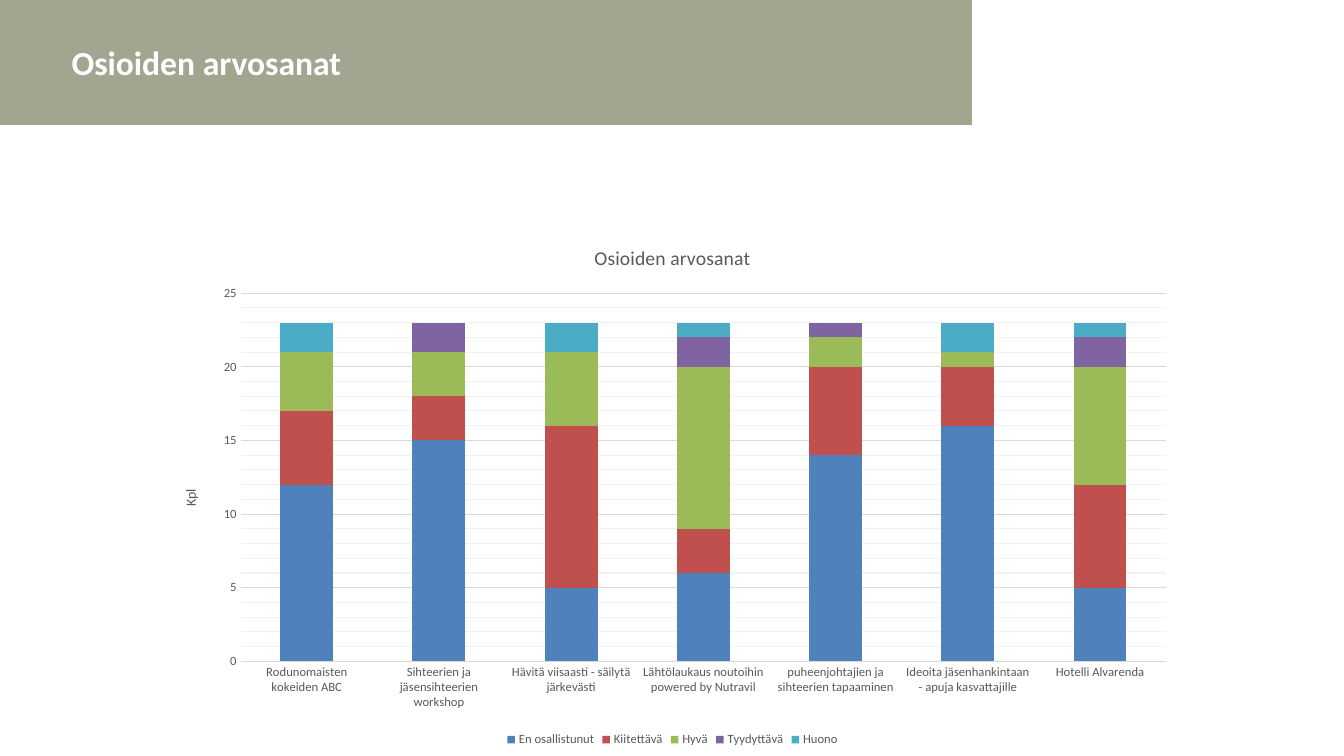
from copy import deepcopy

from lxml.etree import SubElement
from pptx import Presentation
from pptx.chart.data import CategoryChartData
from pptx.dml.color import RGBColor
from pptx.enum.chart import XL_CHART_TYPE, XL_LEGEND_POSITION, XL_TICK_MARK
from pptx.enum.shapes import MSO_SHAPE
from pptx.enum.text import MSO_ANCHOR
from pptx.oxml.ns import qn
from pptx.util import Inches, Pt

# Content
TITLE = "Osioiden arvosanat"
UNIT = "Kpl"
PARTS = [
    "Rodunomaisten kokeiden ABC",
    "Sihteerien ja jäsensihteerien workshop",
    "Hävitä viisaasti - säilytä järkevästi",
    "Lähtölaukaus noutoihin powered by Nutravil",
    "puheenjohtajien ja sihteerien tapaaminen",
    "Ideoita jäsenhankintaan - apuja kasvattajille",
    "Hotelli Alvarenda",
]
GRADES = [
    ("En osallistunut", "4F81BD", (12, 15, 5, 6, 14, 16, 5)),
    ("Kiitettävä", "C0504D", (5, 3, 11, 3, 6, 4, 7)),
    ("Hyvä", "9BBB59", (4, 3, 5, 11, 2, 1, 8)),
    ("Tyydyttävä", "8064A2", (0, 2, None, 2, 1, None, 2)),
    ("Huono", "4BACC6", (2, None, 2, 1, None, 2, 1)),
]
COLORS = {"band": "A1A690", "white": "FFFFFF", "text": "595959",
          "grid": "D9D9D9", "minor": "F2F2F2"}
PLOT = {"x": 0.08, "y": 0.13, "w": 0.9, "h": 0.7}
FONT = "Calibri"


def rgb(name):
    return RGBColor.from_string(COLORS[name])


def style(font, size, color="text", bold=False):
    font.name, font.size, font.bold = FONT, Pt(size), bold
    font.color.rgb = rgb(color)


def rule(line):
    line.color.rgb = rgb("grid")
    line.width = Pt(0.75)


def label(owner, text, size):
    frame = owner.text_frame
    frame.text = text
    style(frame.paragraphs[0].font, size)


deck = Presentation()
deck.slide_width, deck.slide_height = Inches(13.33), Inches(7.5)
slide = deck.slides.add_slide(deck.slide_layouts[6])

# Title band
band = slide.shapes.add_shape(MSO_SHAPE.RECTANGLE, 0, 0, Inches(9.64), Inches(1.24))
band.shadow.inherit = False
band.fill.solid()
band.fill.fore_color.rgb = rgb("band")
band.line.fill.background()

# Title
box = slide.shapes.add_textbox(Inches(0.67), Inches(0.05), Inches(7.73), Inches(1.13))
frame = box.text_frame
frame.word_wrap = True
frame.vertical_anchor = MSO_ANCHOR.MIDDLE
frame.margin_left = frame.margin_right = Inches(0.04)
frame.margin_top = frame.margin_bottom = Inches(0.04)
frame.text = TITLE
style(frame.paragraphs[0].font, 24, "white", True)

# Stacked column chart
data = CategoryChartData()
data.categories = PARTS
for name, _, votes in GRADES:
    data.add_series(name, votes)
chart = slide.shapes.add_chart(
    XL_CHART_TYPE.COLUMN_STACKED, Inches(1.57), Inches(2.23),
    Inches(10.2), Inches(5.22), data).chart
style(chart.font, 10)
chart.has_title = True
label(chart.chart_title, TITLE, 14)
chart.chart_title.include_in_layout = False
chart.has_legend = True
chart.legend.position = XL_LEGEND_POSITION.BOTTOM
chart.legend.include_in_layout = False
style(chart.legend.font, 9)

plot = chart.plots[0]
plot.gap_width, plot.overlap = 150, 100
plot.vary_by_categories = False
for series, (_, color, _) in zip(plot.series, GRADES):
    series.format.fill.solid()
    series.format.fill.fore_color.rgb = RGBColor.from_string(color)

# Axes
cat, val = chart.category_axis, chart.value_axis
for axis in (cat, val):
    axis.major_tick_mark = axis.minor_tick_mark = XL_TICK_MARK.NONE
    style(axis.tick_labels.font, 9)
rule(cat.format.line)
val.format.line.fill.background()
val.minimum_scale, val.maximum_scale = 0, 25
val.major_unit, val.minor_unit = 5, 1
label(val.axis_title, UNIT, 10)

# Gridlines: the minor ones take the major style in a paler colour
val.has_major_gridlines = val.has_minor_gridlines = True
rule(val.major_gridlines.format.line)
area = chart.element.find(".//" + qn("c:plotArea"))
major = area.find(".//" + qn("c:majorGridlines"))
minor = area.find(".//" + qn("c:minorGridlines"))
minor.append(deepcopy(major.find(qn("c:spPr"))))
minor.find(".//" + qn("a:srgbClr")).set("val", COLORS["minor"])

# Plot area placement
layout = area.find(qn("c:layout"))
if layout is None:
    layout = SubElement(area, qn("c:layout"))
    area.insert(0, layout)
manual = SubElement(layout, qn("c:manualLayout"))
settings = [("layoutTarget", "inner"), ("xMode", "edge"), ("yMode", "edge")]
for key, value in settings + list(PLOT.items()):
    SubElement(manual, qn("c:" + key)).set("val", str(value))

deck.save("out.pptx")
